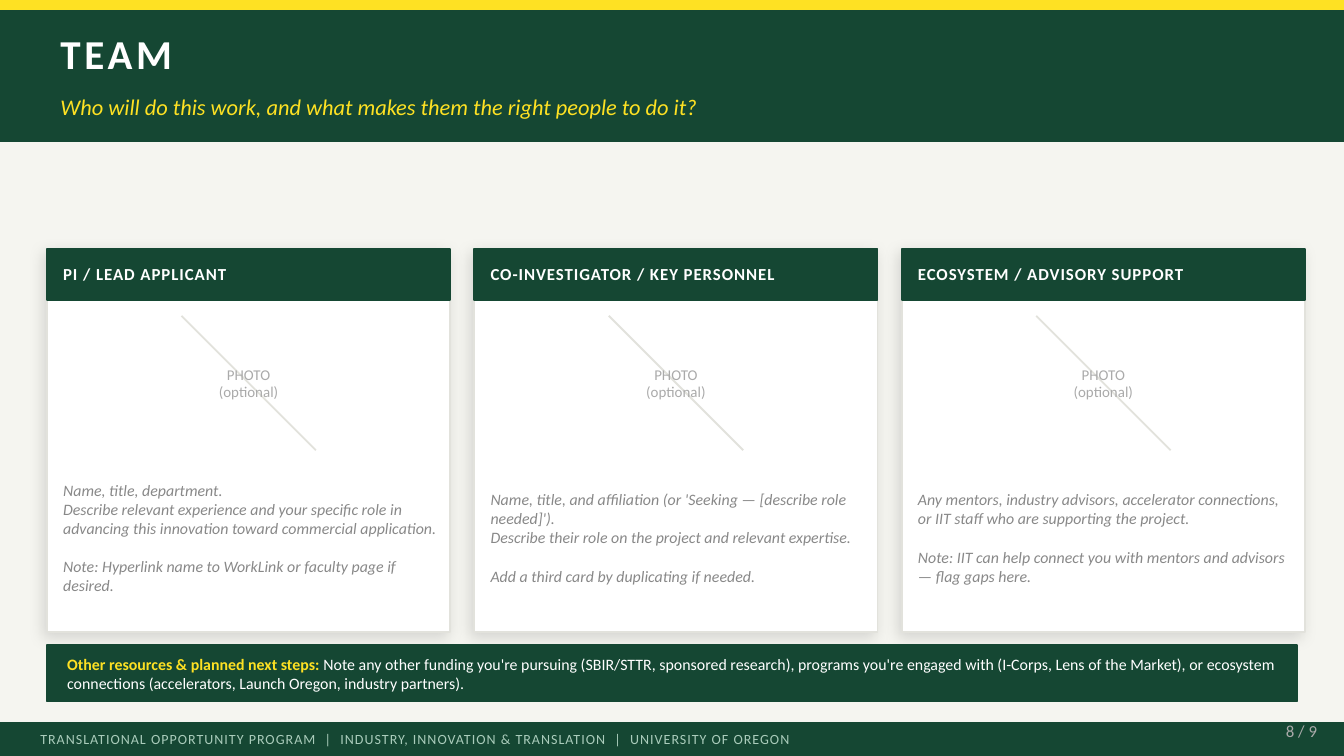
from lxml import etree
from pptx import Presentation, util as u
from pptx.dml.color import RGBColor
from pptx.enum import shapes, text
from pptx.oxml.ns import qn

GREEN = RGBColor(0x15, 0x47, 0x33)
YELLOW = RGBColor(0xFE, 0xE1, 0x23)
WHITE = RGBColor(0xFF, 0xFF, 0xFF)
CREAM = RGBColor(0xF5, 0xF5, 0xF0)
RULE = RGBColor(0xE2, 0xE2, 0xDC)
MINT = RGBColor(0xAA, 0xCC, 0xBB)
SILVER = RGBColor(0xAA, 0xAA, 0xAA)
GREY = RGBColor(0x88, 0x88, 0x88)

FONT = "Calibri"
WIDTH = 10
HEIGHT = WIDTH * 9 / 16
MARGIN, PITCH, CARD_W = 0.35, 3.18, 3
CARD_TOP, CARD_H = 1.85, 2.85
INSET, TEXT_W = 0.12, 2.8
FOOTER_TOP, FOOTER_H = 5.38, 0.24
NOTE_GAP = 10.4

CARDS = [
    ("PI / LEAD APPLICANT",
     ["Name, title, department.",
      "Describe relevant experience and your specific role in advancing "
      "this innovation toward commercial application."],
     "Note: Hyperlink name to WorkLink or faculty page if desired."),
    ("CO-INVESTIGATOR / KEY PERSONNEL",
     ["Name, title, and affiliation (or 'Seeking — [describe role needed]').",
      "Describe their role on the project and relevant expertise."],
     "Add a third card by duplicating if needed."),
    ("ECOSYSTEM / ADVISORY SUPPORT",
     ["Any mentors, industry advisors, accelerator connections, "
      "or IIT staff who are supporting the project."],
     "Note: IIT can help connect you with mentors and advisors — flag gaps here."),
]


def inches(*lengths):
    return [u.Inches(n) for n in lengths]


def add_rect(s, x, y, w, h, fill, line=None):
    sp = s.shapes.add_shape(shapes.MSO_SHAPE.RECTANGLE, *inches(x, y, w, h))
    sp.fill.solid()
    sp.fill.fore_color.rgb = fill
    sp.line.color.rgb = line or fill
    sp.line.width = u.Pt(1)
    sp.shadow.inherit = False
    return sp


def add_shadow(sp):
    effects = sp.element.spPr.find(qn("a:effectLst"))
    shadow = etree.SubElement(effects, qn("a:outerShdw"), blurRad=str(u.Pt(8)),
                              dist=str(u.Pt(3)), dir=str(135 * 60000),
                              algn="bl", rotWithShape="0")
    color = etree.SubElement(shadow, qn("a:srgbClr"), val="000000")
    etree.SubElement(color, qn("a:alpha"), val="12000")


def add_run(p, words, size, color, bold=False, italic=False, spacing=0):
    r = p.add_run()
    r.text = words
    r.font.name = FONT
    r.font.size = u.Pt(size)
    r.font.color.rgb = color
    r.font.bold = bold
    r.font.italic = italic
    if spacing:
        r.font._element.set("spc", str(int(spacing * 100)))


def set_frame(sp):
    tf = sp.text_frame
    tf.word_wrap = True
    tf.auto_size = text.MSO_AUTO_SIZE.NONE
    tf.vertical_anchor = text.MSO_ANCHOR.MIDDLE
    tf.margin_left = tf.margin_right = tf.margin_top = tf.margin_bottom = 0
    return tf


def add_text(s, x, y, w, h, lines, size, color, align=text.PP_ALIGN.LEFT, **style):
    tf = set_frame(s.shapes.add_textbox(*inches(x, y, w, h)))
    for i, words in enumerate(lines):
        p = tf.add_paragraph() if i else tf.paragraphs[0]
        p.alignment = align
        add_run(p, words, size, color, **style)
    return tf


def fill_placeholder(sp, below, x, y, w, h, words, size, color, **style):
    sp.left, sp.top, sp.width, sp.height = inches(x, y, w, h)
    below.element.addnext(sp.element)
    p = set_frame(sp).paragraphs[0]
    p.alignment = text.PP_ALIGN.LEFT
    p.space_before = u.Pt(0)
    add_run(p, words, size, color, **style)


def add_line(s, x1, y1, x2, y2):
    line = s.shapes.add_connector(shapes.MSO_CONNECTOR.STRAIGHT, *inches(x1, y1, x2, y2))
    line.line.color.rgb = RULE
    line.line.width = u.Pt(1)
    etree.SubElement(line.element.spPr, qn("a:effectLst"))


def add_header(s):
    add_rect(s, 0, 0, WIDTH, 1.05, GREEN)
    stripe = add_rect(s, 0, 0, WIDTH, 0.07, YELLOW)
    title, subtitle = s.placeholders
    fill_placeholder(title, stripe, 0.45, 0.12, 8.5, 0.55, "TEAM", 22, WHITE,
                     bold=True, spacing=2)
    fill_placeholder(subtitle, title, 0.45, 0.62, 8.5, 0.35,
                     "Who will do this work, and what makes them the right people to do it?",
                     12, YELLOW, italic=True)


def add_footer(s):
    add_rect(s, 0, FOOTER_TOP, WIDTH, FOOTER_H, GREEN)
    add_text(s, 0.3, FOOTER_TOP, 9, FOOTER_H,
             ["TRANSLATIONAL OPPORTUNITY PROGRAM  |  INDUSTRY, INNOVATION & TRANSLATION"
              "  |  UNIVERSITY OF OREGON"], 7.5, MINT, spacing=0.5)
    add_text(s, 8.9, 5.33, 0.9, 0.22, ["8 / 9"], 9, SILVER, text.PP_ALIGN.RIGHT)


def add_card(s, column, heading, lines, note):
    x = MARGIN + column * PITCH
    add_shadow(add_rect(s, x, CARD_TOP, CARD_W, CARD_H, WHITE, RULE))
    add_rect(s, x, CARD_TOP, CARD_W, 0.38, GREEN)
    add_text(s, x + INSET, CARD_TOP + 0.02, TEXT_W, 0.34, [heading], 9, WHITE,
             bold=True, spacing=0.5)
    photo_x, photo_y = x + CARD_W / 3, CARD_TOP + 0.5
    add_line(s, photo_x, photo_y, photo_x + 1, photo_y + 1)
    add_text(s, photo_x, photo_y + 0.25, 1, 0.5, ["PHOTO", "(optional)"], 8, SILVER,
             text.PP_ALIGN.CENTER)
    tf = add_text(s, x + INSET, CARD_TOP + 1.6, TEXT_W, 1.1, lines + [note], 8.5, GREY,
                  italic=True)
    tf.paragraphs[-1].space_before = u.Pt(NOTE_GAP)


def add_next_steps(s):
    add_rect(s, MARGIN, 4.8, WIDTH - 2 * MARGIN, 0.42, GREEN)
    tf = add_text(s, 0.5, 4.8, 9.1, 0.42, ["Other resources & planned next steps: "],
                  8.5, YELLOW, bold=True)
    add_run(tf.paragraphs[0],
            "Note any other funding you're pursuing (SBIR/STTR, sponsored research), "
            "programs you're engaged with (I-Corps, Lens of the Market), or ecosystem "
            "connections (accelerators, Launch Oregon, industry partners).", 8.5, WHITE)


def main():
    prs = Presentation()
    prs.slide_width, prs.slide_height = inches(WIDTH, HEIGHT)
    s = prs.slides.add_slide(prs.slide_layouts[0])
    s.background.fill.solid()
    s.background.fill.fore_color.rgb = CREAM
    add_header(s)
    add_footer(s)
    for column, card in enumerate(CARDS):
        add_card(s, column, *card)
    add_next_steps(s)
    prs.save("out.pptx")


if __name__ == "__main__":
    main()
